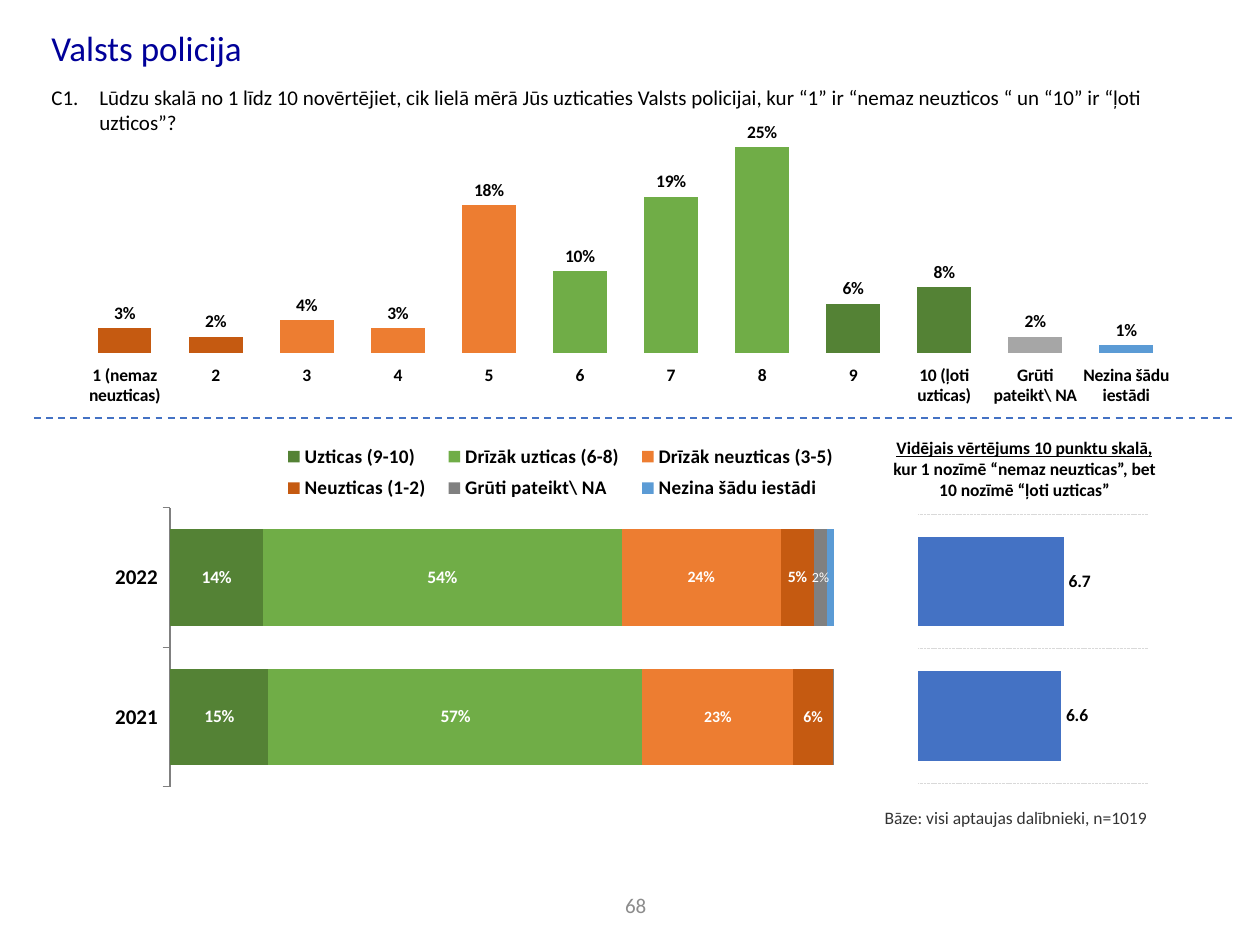
import pptx
import pptx.chart.data
import pptx.dml.color
import pptx.enum.chart
import pptx.enum.dml
import pptx.enum.shapes
import pptx.enum.text
import pptx.oxml
import pptx.util
from pptx.util import Inches

XL = pptx.enum.chart
LINE = pptx.enum.dml.MSO_LINE
ANCHOR = pptx.enum.text.MSO_ANCHOR
ALIGN = pptx.enum.text.PP_ALIGN
NS = 'xmlns:c="http://schemas.openxmlformats.org/drawingml/2006/chart"'

DARK_GREEN, GREEN, ORANGE, BROWN = "548235", "70AD47", "ED7D31", "C55A11"
LIGHT_GRAY, GRAY, SKY, BLUE = "A6A6A6", "808080", "5B9BD5", "4472C4"
BLACK, WHITE = "000000", "FFFFFF"


def rgb(value):
    return pptx.dml.color.RGBColor.from_string(value)


def set_layout(parent, x, y, w, h, inner=False):
    """Place a plot area or legend by fractions of the chart."""
    for old in parent.findall(pptx.oxml.ns.qn("c:layout")):
        parent.remove(old)
    target = '<c:layoutTarget val="inner"/>' if inner else ""
    sizes = "".join(f'<c:{k} val="{v}"/>' for k, v in zip("xywh", (x, y, w, h)))
    layout = pptx.oxml.parse_xml(
        f'<c:layout {NS}><c:manualLayout>{target}<c:xMode val="edge"/>'
        f'<c:yMode val="edge"/>{sizes}</c:manualLayout></c:layout>')
    parent.insert(0 if inner else 1, layout)


class Deck:
    font = "Calibri"

    def __init__(self, prs):
        self.s = prs.slides.add_slide(prs.slide_layouts[6])

    def style(self, font, size, color=BLACK, bold=False):
        font.name, font.size, font.bold = self.font, pptx.util.Pt(size), bold
        font.color.rgb = rgb(color)

    def text(self, box, runs, size, color=BLACK, bold=False, align=ALIGN.LEFT,
             anchor=ANCHOR.TOP, hanging=0, inset=True):
        """Add one paragraph; runs are (text, underlined) pairs."""
        tf = self.s.shapes.add_textbox(*map(Inches, box)).text_frame
        tf.word_wrap, tf.vertical_anchor = True, anchor
        if not inset:
            tf.margin_left = tf.margin_right = tf.margin_top = tf.margin_bottom = 0
        p = tf.paragraphs[0]
        p.alignment = align
        if hanging:
            pPr = p._p.get_or_add_pPr()
            pPr.set("marL", str(Inches(hanging)))
            pPr.set("indent", str(-Inches(hanging)))
        for words, underlined in runs:
            r = p.add_run()
            r.text = words
            self.style(r.font, size, color, bold)
            r.font.underline = underlined

    def dashed_line(self, x1, x2, y):
        line = self.s.shapes.add_connector(
            pptx.enum.shapes.MSO_CONNECTOR.STRAIGHT, *map(Inches, (x1, y, x2, y)))
        line.line.color.rgb = rgb(BLUE)
        line.line.width = pptx.util.Pt(1)
        line.line.dash_style = LINE.DASH
        line._element.spPr.append(pptx.oxml.parse_xml(
            '<a:effectLst xmlns:a="http://schemas.openxmlformats.org/drawingml/2006/main"/>'))

    def chart(self, kind, box, cats, series, fmt, gap, plot_box, size=12):
        """Add a chart without value axis; series are (name, values, colour)."""
        data = pptx.chart.data.CategoryChartData(number_format=fmt)
        data.categories = cats
        for name, values, _ in series:
            data.add_series(name, values)
        chart = self.s.shapes.add_chart(kind, *map(Inches, box), data).chart
        self.style(chart.font, size)
        chart.has_title = chart.has_legend = False
        chart.value_axis.visible = False
        chart.value_axis.has_major_gridlines = False
        plot = chart.plots[0]
        plot.gap_width, plot.vary_by_categories = gap, False
        for item, (_, _, color) in zip(plot.series, series):
            self.fill(item, color)
            item.invert_if_negative = False
        set_layout(chart._chartSpace.chart.plotArea, *plot_box, inner=True)
        return chart

    def fill(self, item, color):
        item.format.fill.solid()
        item.format.fill.fore_color.rgb = rgb(color)

    def labels(self, series, fmt, size, color=BLACK, position=None):
        labels = series.data_labels
        labels.show_value = True
        labels.number_format, labels.number_format_is_linked = fmt, False
        self.style(labels.font, size, color, True)
        if position is not None:
            labels.position = position


def add_score_chart(deck):
    cats = ["1 (nemaz neuzticas)", *map(str, range(2, 10)), "10 (ļoti uzticas)",
            "Grūti pateikt\\ NA", "Nezina šādu iestādi"]
    values = [0.03, 0.02, 0.04, 0.03, 0.18, 0.1, 0.19, 0.25, 0.06, 0.08, 0.02, 0.01]
    colors = ([BROWN] * 2 + [ORANGE] * 3 + [GREEN] * 3 + [DARK_GREEN] * 2
              + [LIGHT_GRAY, SKY])
    chart = deck.chart(XL.XL_CHART_TYPE.COLUMN_CLUSTERED, (0.45, 0.79, 8.94, 2.65),
                       cats, [("Series 1", values, BROWN)], "0%", 70,
                       (0.02, 0.02, 0.97, 0.74))
    series = chart.plots[0].series[0]
    for i, color in enumerate(colors):
        deck.fill(series.points[i], color)
    deck.labels(series, "0%", 10, position=XL.XL_LABEL_POSITION.OUTSIDE_END)
    axis = chart.value_axis
    axis.minimum_scale, axis.maximum_scale, axis.major_unit = 0, 0.3, 0.1
    deck.style(chart.category_axis.tick_labels.font, 10, bold=True)
    chart.category_axis.format.line.fill.background()


def add_trust_chart(deck):
    series = [("Uzticas (9-10)", (0.15, 0.14), DARK_GREEN),
              ("Drīzāk uzticas (6-8)", (0.57, 0.54), GREEN),
              ("Drīzāk neuzticas (3-5)", (0.23, 0.24), ORANGE),
              ("Neuzticas (1-2)", (0.06, 0.05), BROWN),
              ("Grūti pateikt\\ NA", (0.002, 0.02), GRAY),
              ("Nezina šādu iestādi", (None, 0.01), SKY)]
    chart = deck.chart(XL.XL_CHART_TYPE.BAR_STACKED_100, (0.73, 3.44, 6.2, 2.81),
                       ["2021", "2022"], series, "0%", 44,
                       (0.1, 0.21, 0.85, 0.79), 18)
    plot = chart.plots[0]
    plot.overlap = 100
    for item, size in zip(plot.series, (10, 10, 9, 9)):
        deck.labels(item, "0%", size, WHITE)
    deck.style(plot.series[4].points[1].data_label.font, 8, WHITE)
    axis = chart.category_axis
    deck.style(axis.tick_labels.font, 12, bold=True)
    axis.format.line.color.rgb = rgb(GRAY)
    chart.has_legend = True
    chart.legend.position = XL.XL_LEGEND_POSITION.TOP
    chart.legend.include_in_layout = False
    deck.style(chart.legend.font, 11, bold=True)
    set_layout(chart.legend._element, 0.23, 0.01, 0.74, 0.2)


def add_average_chart(deck):
    chart = deck.chart(XL.XL_CHART_TYPE.BAR_CLUSTERED, (7.19, 3.92, 1.98, 2.32),
                       ["1", "2"], [("Series 1", (6.6, 6.7), BLUE)], "0.0", 50,
                       (0.05, 0.07, 0.92, 0.92), 7)
    deck.labels(chart.plots[0].series[0], "0.0", 10,
                position=XL.XL_LABEL_POSITION.OUTSIDE_END)
    axis = chart.value_axis
    axis.minimum_scale, axis.maximum_scale, axis.major_unit = 1, 10, 50
    chart.category_axis.visible = False
    grid = chart.category_axis.major_gridlines.format.line
    grid.color.rgb = rgb("D9D9D9")
    grid.width, grid.dash_style = pptx.util.Pt(0.5), LINE.SQUARE_DOT


def main():
    prs = pptx.Presentation()
    prs.slide_width, prs.slide_height = Inches(10), Inches(7.5)
    deck = Deck(prs)
    deck.text((0.31, 0.13, 9.37, 0.49), [("Valsts policija", False)], 20, "000099",
              anchor=ANCHOR.MIDDLE)
    deck.text((0.31, 0.62, 9.02, 0.78),
              [("C1. \tLūdzu skalā no 1 līdz 10 novērtējiet, cik lielā mērā Jūs "
                "uzticaties Valsts policijai, kur “1” ir “nemaz neuzticos “ un “10” "
                "ir “ļoti uzticos”?", False)], 12, hanging=0.38)
    add_score_chart(deck)
    add_trust_chart(deck)
    add_average_chart(deck)
    deck.text((6.99, 3.42, 2.28, 0.61),
              [("Vidējais vērtējums 10 punktu skalā, ", True),
               ("kur 1 nozīmē “nemaz neuzticas”, bet 10 nozīmē “ļoti uzticas”", False)],
              10, bold=True, align=ALIGN.CENTER)
    deck.text((5.95, 6.33, 3.15, 0.24),
              [("Bāze: visi aptaujas dalībnieki, n=1019", False)], 10, "333333",
              align=ALIGN.RIGHT, anchor=ANCHOR.BOTTOM, inset=False)
    deck.dashed_line(0.27, 9.8, 3.32)
    deck.text((4.77, 7.04, 0.55, 0.28), [("68", False)], 12, "8C8C8C",
              align=ALIGN.CENTER, anchor=ANCHOR.MIDDLE)
    prs.save("out.pptx")


if __name__ == "__main__":
    main()
